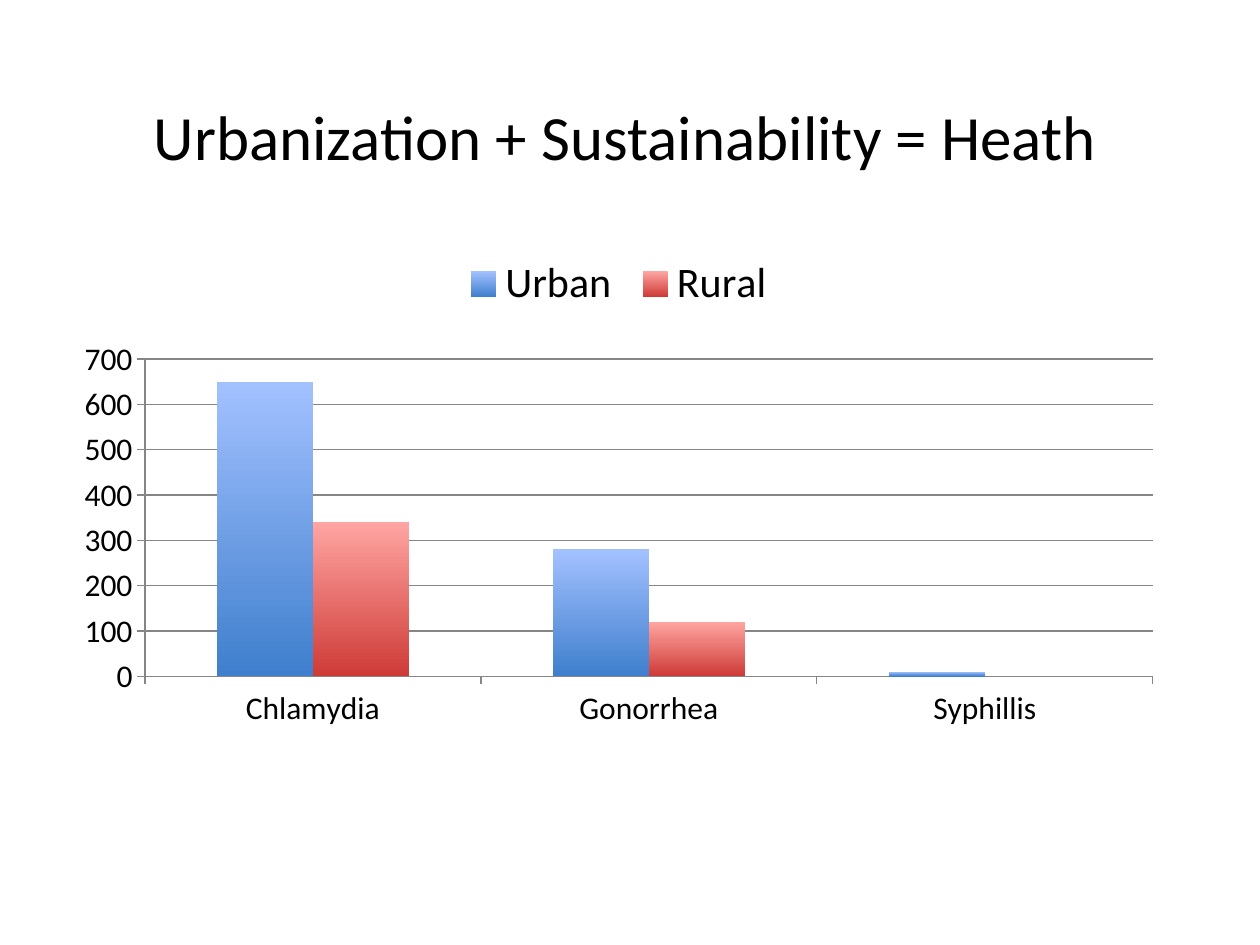
from pptx import Presentation
from pptx.chart.data import CategoryChartData
from pptx.dml.color import RGBColor
from pptx.enum.chart import XL_CHART_TYPE as ChartType, XL_LEGEND_POSITION as LegendPos, XL_TICK_MARK as Tick
from pptx.enum.text import MSO_ANCHOR as Anchor, PP_ALIGN as Align
from pptx.oxml import parse_xml
from pptx.oxml.ns import nsdecls
from pptx.util import Inches, Pt

BLACK = RGBColor(0x00, 0x00, 0x00)
GREY = RGBColor(0x86, 0x86, 0x86)
BLUES = RGBColor(0xA3, 0xC1, 0xFF), RGBColor(0x3F, 0x7F, 0xCD)
REDS = RGBColor(0xFF, 0xA5, 0xA2), RGBColor(0xCE, 0x3B, 0x37)
FONT = "Calibri"
CHART_W, CHART_H = 8.83, 3.83


def style_font(font, size):
    """Apply the slide's typeface and text colour at a point size."""
    font.name, font.size, font.bold = FONT, Pt(size), False
    font.color.rgb = BLACK


def manual_layout(target, x, y, w, h):
    """Return a chart layout element from a box in inches within the frame."""
    shares = "".join(f'<c:{k} val="{v:.4f}"/>' for k, v in
                     (("x", x / CHART_W), ("y", y / CHART_H),
                      ("w", w / CHART_W), ("h", h / CHART_H)))
    return parse_xml(
        f'<c:layout {nsdecls("c")}><c:manualLayout>{target}'
        f'<c:xMode val="edge"/><c:yMode val="edge"/>{shares}</c:manualLayout></c:layout>')


prs = Presentation()
prs.slide_width, prs.slide_height = Inches(10), Inches(7.5)
s = prs.slides.add_slide(prs.slide_layouts[6])
margin = Inches(0.5)

# Title
title = s.shapes.add_textbox(margin, Inches(0.53), Inches(8.92), Inches(1.08))
tf = title.text_frame
tf.word_wrap = True
tf.vertical_anchor = Anchor.MIDDLE
p = tf.paragraphs[0]
p.alignment = Align.CENTER
r = p.add_run()
r.text = "Urbanization + Sustainability = Heath"
style_font(r.font, 36)

# Chart
data = CategoryChartData()
data.categories = ["Chlamydia", "Gonorrhea", "Syphillis"]
data.add_series("Urban", (650, 280, 10))
data.add_series("Rural", (340, 120, 0))
chart = s.shapes.add_chart(ChartType.COLUMN_CLUSTERED, margin, Inches(2.01),
                           Inches(CHART_W), Inches(CHART_H), data).chart
style_font(chart.font, 18)
chart.has_title = False
chart.has_legend = True
legend = chart.legend
legend.position = LegendPos.TOP
legend.include_in_layout = False
style_font(legend.font, 24)

# Axes
for axis in (chart.category_axis, chart.value_axis):
    axis.major_tick_mark, axis.minor_tick_mark = Tick.OUTSIDE, Tick.NONE
    axis.format.line.color.rgb = GREY
    axis.format.line.width = Pt(0.75)
    style_font(axis.tick_labels.font, 18)
value_axis = chart.value_axis
value_axis.minimum_scale, value_axis.maximum_scale = 0, 700
value_axis.major_unit = 100
value_axis.has_major_gridlines = True
value_axis.major_gridlines.format.line.color.rgb = GREY
value_axis.major_gridlines.format.line.width = Pt(0.75)

# Columns shaded from light at the top to dark at the base
plot = chart.plots[0]
plot.gap_width, plot.overlap = 150, 0
plot.vary_by_categories = False
for series, shades in zip(plot.series, (BLUES, REDS)):
    fill = series.format.fill
    fill.gradient()
    fill.gradient_angle = 270
    for stop, shade in zip(fill.gradient_stops, shades):
        stop.color.rgb = shade
    series.format.line.fill.background()

# Places of the plot area and the legend inside the chart frame
area = chart._chartSpace.chart.plotArea
key = chart._chartSpace.chart.find(area.tag.replace("plotArea", "legend"))
for part in (area, key):
    for old in part.xpath("c:layout"):
        part.remove(old)
area.insert(0, manual_layout('<c:layoutTarget val="inner"/>', 0.65, 0.84, 8, 2.52))
key.xpath("c:legendPos")[0].addnext(manual_layout("", 3.1, 0.02, 2.62, 0.45))

prs.save("out.pptx")
